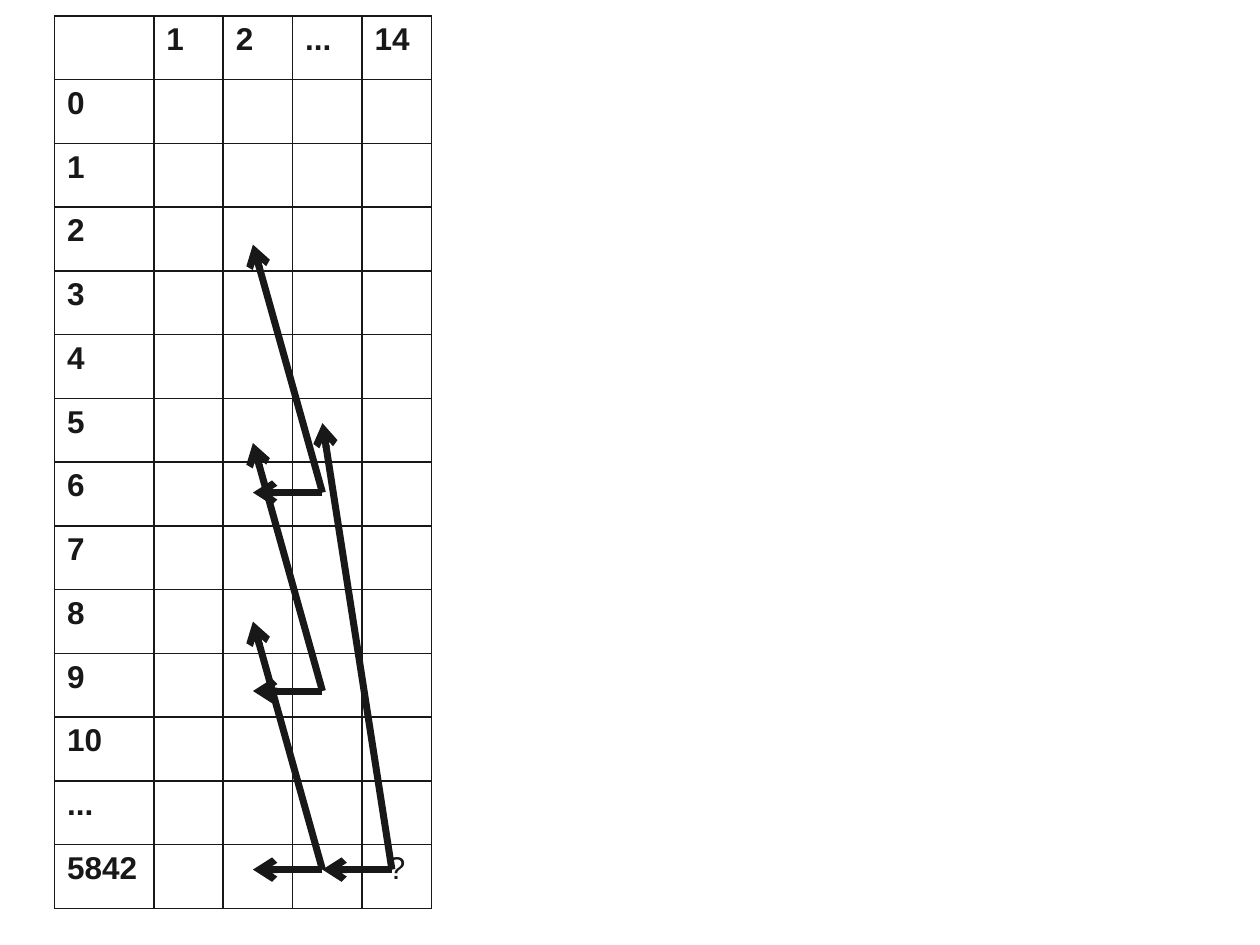
"""Build a slide with a table of amounts by coins and the arrows between its cells."""
from dataclasses import dataclass

from lxml.etree import SubElement as Sub
from pptx import Presentation
from pptx.dml.color import RGBColor
from pptx.enum.shapes import MSO_CONNECTOR as Link
from pptx.enum.text import PP_ALIGN as Align
from pptx.oxml import parse_xml
from pptx.oxml.ns import nsdecls, qn
from pptx.slide import Slide
from pptx.util import Cm, Pt

INK = RGBColor(0x18, 0x18, 0x18)
PAPER = RGBColor(0xFF, 0xFF, 0xFF)
FONT = {"name": "Arial", "size": Pt(18)}
HEADS = ["", "1", "2", "...", "14"]
SUMS = [*map(str, range(11)), "...", "5842"]
STEP = 1.4


@dataclass
class Fork:
    """Two arrows from one point: one goes left, the other left and up."""
    x: float
    y: float
    rise: float


FORKS = [
    Fork(7.9, 17.53, 9),
    Fork(6.5, 17.53, 5),
    Fork(6.5, 13.93, 5),
    Fork(6.5, 9.93, 5),
]


def edge(cell) -> None:
    """Give a cell a thin line on each side."""
    props = cell._tc.get_or_add_tcPr()
    for spot, side in enumerate("LRTB"):
        props.insert(spot, parse_xml(
            f'<a:ln{side} {nsdecls("a")} w="{Pt(1)}"><a:solidFill>'
            f'<a:srgbClr val="{INK}"/></a:solidFill></a:ln{side}>'))


def write(cell, text: str, bold: bool) -> None:
    """Put styled text in a cell."""
    run = cell.text_frame.paragraphs[0].add_run()
    run.text = text
    for key, value in {**FONT, "bold": bold}.items():
        setattr(run.font, key, value)
    run.font.color.rgb = INK


def draw_grid(slide: Slide) -> None:
    """Draw the table with its heads and sums."""
    rows, cols = len(SUMS) + 1, len(HEADS)
    frame = slide.shapes.add_table(rows, cols, Cm(1.1), Cm(0.32), Cm(7.6), Cm(18))
    grid = frame.table
    for spot, col in enumerate(grid.columns):
        col.width = Cm(STEP if spot else 2)
    for cell in grid.iter_cells():
        cell.fill.solid()
        cell.fill.fore_color.rgb = PAPER
        edge(cell)
    for spot, head in enumerate(HEADS[1:], 1):
        write(grid.cell(0, spot), head, True)
    for spot, total in enumerate(SUMS, 1):
        write(grid.cell(spot, 0), total, True)
    goal = grid.cell(rows - 1, cols - 1)
    write(goal, "?", False)
    goal.text_frame.paragraphs[0].alignment = Align.CENTER


def draw_fork(slide: Slide, fork: Fork) -> None:
    """Draw both arrows of a fork."""
    for rise in (0, fork.rise):
        arrow = slide.shapes.add_connector(
            Link.STRAIGHT, Cm(fork.x), Cm(fork.y), Cm(fork.x - STEP), Cm(fork.y - rise))
        arrow.line.width = Pt(4)
        arrow.line.color.rgb = INK
        Sub(arrow.line._get_or_add_ln(), qn("a:tailEnd"), type="arrow")
        Sub(arrow._element.spPr, qn("a:effectLst"))


def main() -> None:
    """Make the deck and save it."""
    deck = Presentation()
    deck.slide_width, deck.slide_height = Cm(25.4), Cm(19.05)
    slide = deck.slides.add_slide(deck.slide_layouts[6])
    draw_grid(slide)
    for fork in FORKS:
        draw_fork(slide, fork)
    deck.save("out.pptx")


if __name__ == "__main__":
    main()
